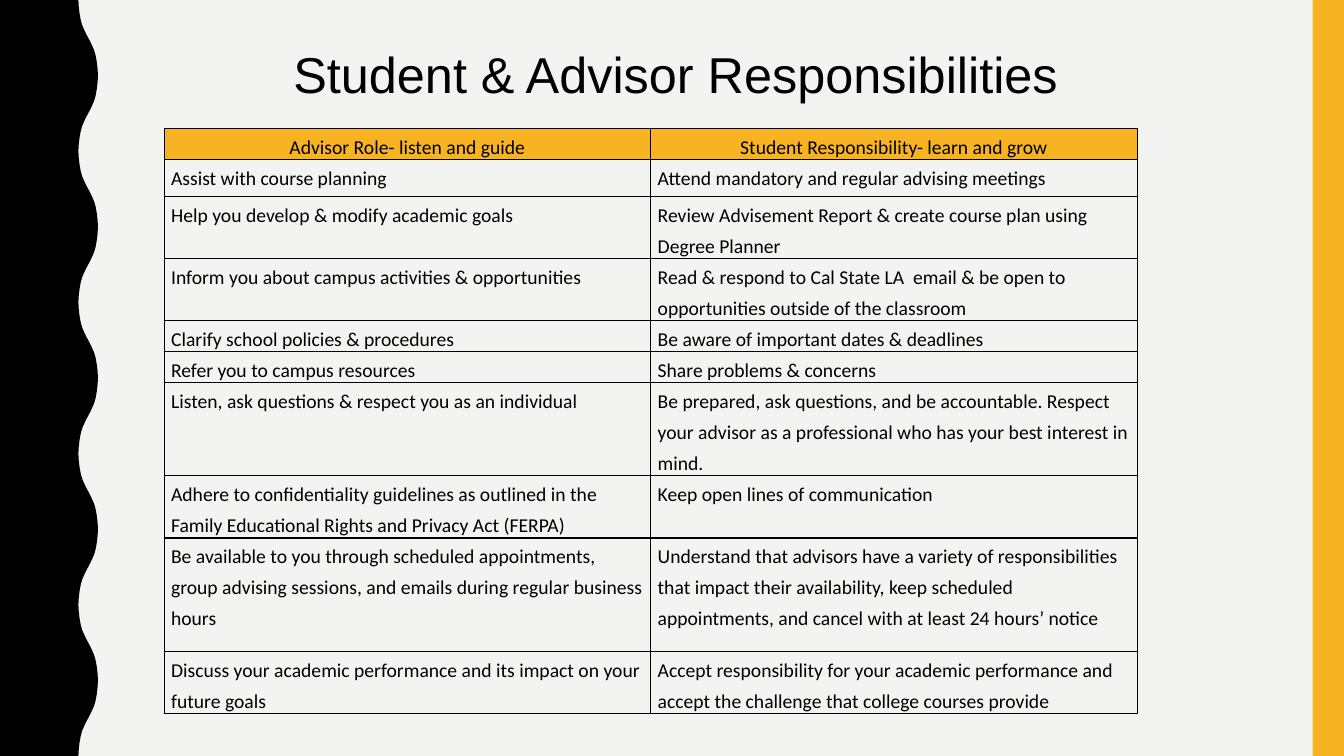
from pptx import Presentation
from pptx.dml.color import RGBColor
from pptx.enum.shapes import MSO_SHAPE
from pptx.enum.text import PP_ALIGN
from pptx.oxml import parse_xml
from pptx.oxml.ns import nsdecls
from pptx.util import Pt

RECT = MSO_SHAPE.RECTANGLE
CENTER, LEFT = PP_ALIGN.CENTER, PP_ALIGN.LEFT

TITLE = "Student & Advisor Responsibilities"
# Row height, advisor text, student text
ROWS = [
    (20.2, "Advisor Role- listen and guide",
     "Student Responsibility- learn and grow"),
    (26.8, "Assist with course planning",
     "Attend mandatory and regular advising meetings"),
    (40.4, "Help you develop & modify academic goals",
     "Review Advisement Report & create course plan using Degree Planner"),
    (40.4, "Inform you about campus activities & opportunities",
     "Read & respond to Cal State LA  email & be open to opportunities "
     "outside of the classroom"),
    (20.2, "Clarify school policies & procedures",
     "Be aware of important dates & deadlines"),
    (20.2, "Refer you to campus resources", "Share problems & concerns"),
    (60.6, "Listen, ask questions & respect you as an individual",
     "Be prepared, ask questions, and be accountable. Respect your advisor "
     "as a professional who has your best interest in mind."),
    (40.4, "Adhere to confidentiality guidelines as outlined in the Family "
     "Educational Rights and Privacy Act (FERPA)",
     "Keep open lines of communication"),
    (81.4, "Be available to you through scheduled appointments, group advising "
     "sessions, and emails during regular business hours",
     "Understand that advisors have a variety of responsibilities that impact "
     "their availability, keep scheduled appointments, and cancel with at "
     "least 24 hours’ notice"),
    (40.4, "Discuss your academic performance and its impact on your future goals",
     "Accept responsibility for your academic performance and accept the "
     "challenge that college courses provide"),
]
COLORS = {"page": "F3F3F2", "ink": "000000", "gold": "F8B323"}
WIDE, HIGH = 960, 540
COL = 347.6
WAVE, WAVES = 108, 5
# First quarter of one wave, from trough to midpoint
BEND = [(56, 0), (56.3, 5), (56.9, 10), (57.7, 14.4),
        (58.7, 18), (60, 21), (61.4, 24), (63, 27)]


def color(name):
    return RGBColor.from_string(COLORS[name])


def paint(shape, name):
    shape.shadow.inherit = False
    shape.fill.solid()
    shape.fill.fore_color.rgb = color(name)
    shape.line.fill.background()


def write(frame, text, font, size, align, space):
    para = frame.paragraphs[0]
    para.alignment = align
    para.line_spacing = space
    run = para.add_run()
    run.text = text
    run.font.name = font
    run.font.size = Pt(size)
    run.font.color.rgb = color("ink")
    return para


def add_edge(slide):
    """Draw the black band; each wave mirrors its first quarter."""
    rise = BEND + [(126 - x, 54 - y) for x, y in BEND[-2::-1]]
    wave = rise + [(x, WAVE - y) for x, y in rise[-2::-1]]
    curve = [(x, y + WAVE * i) for i in range(WAVES) for x, y in wave]
    form = slide.shapes.build_freeform(0, 0, scale=1.0)
    points = curve + [(0, HIGH)]
    form.add_line_segments([(Pt(x), Pt(y)) for x, y in points], close=True)
    paint(form.convert_to_shape(), "ink")


def add_borders(cell):
    props = cell._tc.get_or_add_tcPr()
    for side in "LRTB":
        props.append(parse_xml(
            f'<a:ln{side} {nsdecls("a")} w="{Pt(1)}"><a:solidFill>'
            f'<a:srgbClr val="{COLORS["ink"]}"/></a:solidFill></a:ln{side}>'))


def add_roles(slide):
    total = sum(row[0] for row in ROWS)
    table = slide.shapes.add_table(
        len(ROWS), 2, Pt(117.2), Pt(91.6), Pt(2 * COL), Pt(total)).table
    table.first_row = table.horz_banding = False
    for col in table.columns:
        col.width = Pt(COL)
    for i, (height, *texts) in enumerate(ROWS):
        table.rows[i].height = Pt(height)
        for j, text in enumerate(texts):
            cell = table.cell(i, j)
            cell.margin_left = cell.margin_right = Pt(5)
            cell.margin_top = cell.margin_bottom = 0
            add_borders(cell)
            if i == 0:
                cell.fill.solid()
                cell.fill.fore_color.rgb = color("gold")
            else:
                cell.fill.background()
            align = LEFT if i else CENTER
            write(cell.text_frame, text, "Calibri", 14, align, 1.3)


def add_title(slide):
    box = slide.shapes.add_textbox(Pt(97.2), Pt(5.8), Pt(735), Pt(65))
    box.text_frame.word_wrap = True
    para = write(box.text_frame, TITLE, "Arial", 36, CENTER, 1.5)
    para.level = 1
    props = para._p.get_or_add_pPr()
    props.set("marL", str(Pt(36)))
    props.set("indent", "0")


def main():
    deck = Presentation()
    deck.slide_width, deck.slide_height = Pt(WIDE), Pt(HIGH)
    slide = deck.slides.add_slide(deck.slide_layouts[6])
    slide.background.fill.solid()
    slide.background.fill.fore_color.rgb = color("page")
    add_edge(slide)
    bar = slide.shapes.add_shape(RECT, Pt(937.6), 0, Pt(22.4), Pt(HIGH))
    paint(bar, "gold")
    add_roles(slide)
    add_title(slide)
    deck.save("out.pptx")


if __name__ == "__main__":
    main()
